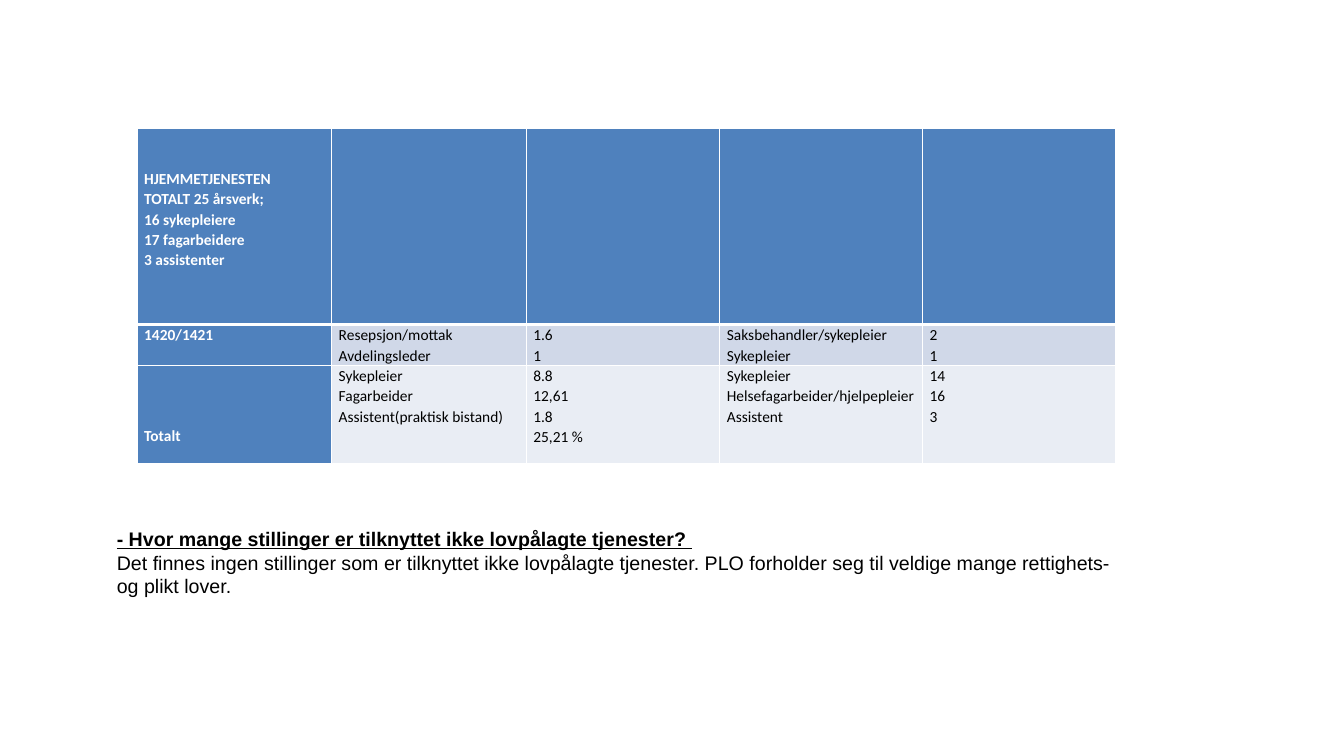
from lxml import etree
from pptx import Presentation
from pptx.dml.color import RGBColor
from pptx.enum.text import MSO_AUTO_SIZE, MSO_ANCHOR
from pptx.oxml.ns import qn
from pptx.util import Inches, Pt

COLORS = {
    "header": "4F81BD",
    "band": "D0D8E8",
    "light": "E9EDF4",
    "white": "FFFFFF",
    "black": "000000",
}
COLUMN_WIDTHS = [1.93, 1.93, 1.92, 2.01, 1.92]
ROW_HEIGHTS = [1.95, 0.4, 0.98]
LABEL_OFFSETS = [0.4, 0, 0.6]
ROW_FILLS = ["header", "band", "light"]
STAFFING = [
    [
        ["HJEMMETJENESTEN", "TOTALT 25 årsverk;", "16 sykepleiere",
         "17 fagarbeidere", "3 assistenter"],
        [], [], [], [],
    ],
    [
        ["1420/1421"],
        ["Resepsjon/mottak", "Avdelingsleder"],
        ["1.6", "1"],
        ["Saksbehandler/sykepleier", "Sykepleier"],
        ["2", "1"],
    ],
    [
        ["Totalt"],
        ["Sykepleier", "Fagarbeider", "Assistent(praktisk bistand)"],
        ["8.8", "12,61", "1.8", "25,21 %"],
        ["Sykepleier", "Helsefagarbeider/hjelpepleier", "Assistent"],
        ["14", "16", "3"],
    ],
]
QUESTION = "- Hvor mange stillinger er tilknyttet ikke lovpålagte tjenester?"
ANSWER = ("Det finnes ingen stillinger som er tilknyttet ikke lovpålagte tjenester. "
          "PLO forholder seg til veldige mange rettighets- og plikt lover.")


def color(name):
    return RGBColor.from_string(COLORS[name])


def add_run(paragraph, text, font, size, color_name, bold=False, underline=False):
    run = paragraph.add_run()
    run.text = text
    run.font.name = font
    run.font.size = Pt(size)
    run.font.bold = bold
    run.font.underline = underline
    run.font.color.rgb = color(color_name)


def set_borders(cell, top, bottom):
    properties = cell._tc.get_or_add_tcPr()
    widths = {"lnL": 1, "lnR": 1, "lnT": top, "lnB": bottom}
    for index, (side, width) in enumerate(widths.items()):
        line = etree.Element(qn(f"a:{side}"), w=str(Pt(width)))
        fill = etree.SubElement(line, qn("a:solidFill"))
        etree.SubElement(fill, qn("a:srgbClr"), val=COLORS["white"])
        properties.insert(index, line)


def fill_cell(cell, lines, fill, is_label, offset):
    cell.fill.solid()
    cell.fill.fore_color.rgb = color(fill)
    cell.margin_left = cell.margin_right = Inches(0.07)
    cell.margin_top = Inches(offset)
    cell.margin_bottom = 0
    cell.vertical_anchor = MSO_ANCHOR.TOP
    frame = cell.text_frame
    for index, line in enumerate(lines):
        paragraph = frame.add_paragraph() if index else frame.paragraphs[0]
        paragraph.line_spacing = 1.07
        add_run(paragraph, line, "Calibri", 11, "white" if is_label else "black", is_label)


def add_staffing_table(slide, left, top):
    frame = slide.shapes.add_table(
        len(STAFFING), len(COLUMN_WIDTHS), Inches(left), Inches(top),
        Inches(sum(COLUMN_WIDTHS)), Inches(sum(ROW_HEIGHTS)))
    table = frame.table
    for column, width in zip(table.columns, COLUMN_WIDTHS):
        column.width = Inches(width)
    for row_index, cells in enumerate(STAFFING):
        table.rows[row_index].height = Inches(ROW_HEIGHTS[row_index])
        for column_index, lines in enumerate(cells):
            cell = table.cell(row_index, column_index)
            is_label = column_index == 0
            fill = "header" if is_label else ROW_FILLS[row_index]
            offset = LABEL_OFFSETS[row_index] if is_label else 0
            fill_cell(cell, lines, fill, is_label, offset)
            set_borders(cell, 3 if row_index == 1 else 1, 3 if row_index == 0 else 1)


def add_question(slide, left, top, width, height):
    box = slide.shapes.add_textbox(Inches(left), Inches(top), Inches(width), Inches(height))
    frame = box.text_frame
    frame.word_wrap = True
    frame.auto_size = MSO_AUTO_SIZE.SHAPE_TO_FIT_TEXT
    question = frame.paragraphs[0]
    add_run(question, QUESTION, "Arial", 14, "black", bold=True, underline=True)
    add_run(question, " ", "Arial", 14, "black", underline=True)
    add_run(frame.add_paragraph(), ANSWER, "Arial", 14, "black")


def main():
    presentation = Presentation()
    presentation.slide_width = Inches(13.33)
    presentation.slide_height = Inches(7.5)
    slide = presentation.slides.add_slide(presentation.slide_layouts[6])
    add_staffing_table(slide, 1.36, 1.27)
    add_question(slide, 1.06, 5.18, 10.11, 0.81)
    presentation.save("out.pptx")


if __name__ == "__main__":
    main()
